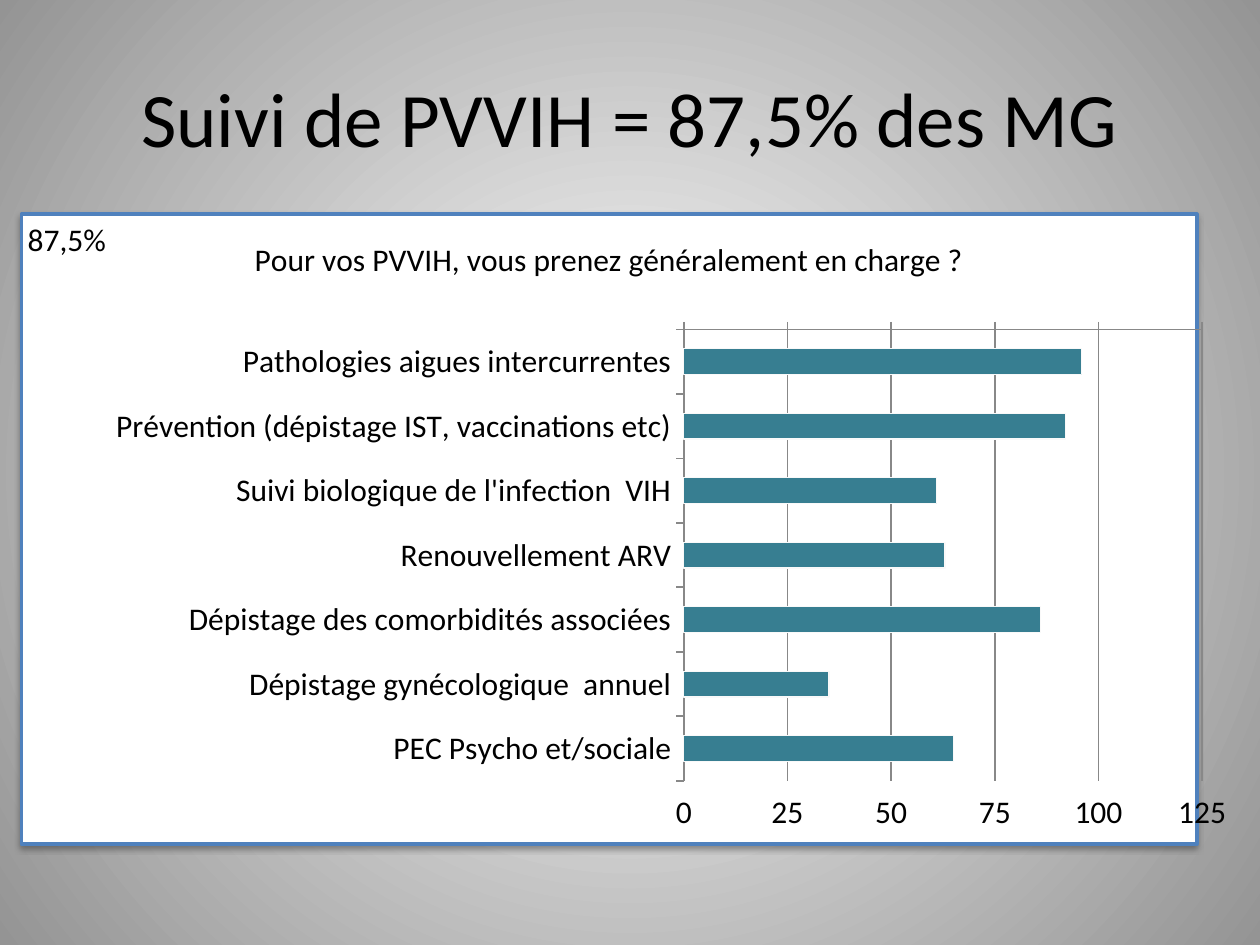
from lxml import etree
from pptx import Presentation
from pptx.chart.data import CategoryChartData
from pptx.dml.color import RGBColor
from pptx.enum.chart import XL_CHART_TYPE, XL_TICK_LABEL_POSITION, XL_TICK_MARK
from pptx.enum.shapes import MSO_SHAPE
from pptx.enum.text import MSO_ANCHOR, PP_ALIGN
from pptx.oxml import parse_xml
from pptx.oxml.ns import nsdecls, qn
from pptx.util import Pt


def color(hex_string):
    return RGBColor.from_string(hex_string)


def set_layout(parent, index, **settings):
    """Give a chart part a manual layout, as fractions of the chart."""
    for old in parent.findall(qn("c:layout")):
        parent.remove(old)
    layout = etree.Element(qn("c:layout"))
    manual = etree.SubElement(layout, qn("c:manualLayout"))
    for tag, value in settings.items():
        etree.SubElement(manual, qn(f"c:{tag}")).set("val", str(value))
    parent.insert(index, layout)


presentation = Presentation()
presentation.slide_width, presentation.slide_height = Pt(720), Pt(540)
slide = presentation.slides.add_slide(presentation.slide_layouts[6])

# Background: radial gradient, white centre to grey corners
background = slide.background.fill
background.gradient()
for stop, shade in zip(background.gradient_stops, ("FFFFFF", "949494")):
    stop.color.rgb = color(shade)
gradient = slide.background._cSld.find(".//" + qn("a:gradFill"))
gradient.replace(gradient.find(qn("a:lin")), parse_xml(
    f'<a:path {nsdecls("a")} path="circle">'
    '<a:fillToRect l="50000" t="50000" r="50000" b="50000"/></a:path>'))

# Heading and white panel
heading = slide.shapes.add_textbox(Pt(36), Pt(21.6), Pt(648), Pt(90))
panel = slide.shapes.add_shape(MSO_SHAPE.RECTANGLE, Pt(12.24), Pt(122.4), Pt(671.76), Pt(360))
panel.fill.solid()
panel.fill.fore_color.rgb = color("FFFFFF")
panel.line.color.rgb = color("4F81BD")
panel.line.width = Pt(2)
panel.shadow.inherit = False
panel._element.spPr.find(qn("a:effectLst")).append(parse_xml(
    f'<a:outerShdw {nsdecls("a")} blurRad="38100" dist="22860" dir="5400000" rotWithShape="0">'
    '<a:srgbClr val="000000"><a:alpha val="35000"/></a:srgbClr></a:outerShdw>'))

for shape, text, size, align, anchor in (
    (heading, "Suivi de PVVIH = 87,5% des MG", 44, PP_ALIGN.CENTER, MSO_ANCHOR.MIDDLE),
    (panel, "87,5%", 18, PP_ALIGN.LEFT, MSO_ANCHOR.TOP),
):
    frame = shape.text_frame
    frame.text = text
    frame.word_wrap = True
    frame.vertical_anchor = anchor
    frame.margin_left = frame.margin_right = frame.margin_top = frame.margin_bottom = Pt(3.6)
    paragraph = frame.paragraphs[0]
    paragraph.alignment = align
    font = paragraph.runs[0].font
    font.name, font.size = "Calibri", Pt(size)
    font.color.rgb = color("000000")

# Bar chart of the care provided
care = {
    "Pathologies aigues intercurrentes": 96,
    "Prévention (dépistage IST, vaccinations etc)": 92,
    "Suivi biologique de l'infection  VIH": 61,
    "Renouvellement ARV": 63,
    "Dépistage des comorbidités associées": 86,
    "Dépistage gynécologique  annuel": 35,
    "PEC Psycho et/sociale": 65,
}
care_data = CategoryChartData()
care_data.categories = list(care)
care_data.add_series("Series 1", list(care.values()))
chart = slide.shapes.add_chart(
    XL_CHART_TYPE.BAR_CLUSTERED, Pt(19.44), Pt(125.28), Pt(682.56), Pt(357.84), care_data).chart
chart.has_legend = False
chart.font.name, chart.font.size = "Calibri", Pt(10)
chart.font.color.rgb = color("000000")

# Bars
plot = chart.plots[0]
plot.gap_width = 150
plot.vary_by_categories = False
bars = plot.series[0].format
bars.fill.solid()
bars.fill.fore_color.rgb = color("377E91")
bars.line.color.rgb = color("F9F9F9")
bars.line.width = Pt(0.75)

# Axes
categories, values = chart.category_axis, chart.value_axis
categories.reverse_order = True
values.minimum_scale, values.maximum_scale, values.major_unit = 0, 125, 25
values.tick_label_position = XL_TICK_LABEL_POSITION.HIGH
values.has_major_gridlines = True
for axis in (categories, values):
    axis.major_tick_mark = XL_TICK_MARK.OUTSIDE
    axis.tick_labels.number_format = "General"
    axis.tick_labels.number_format_is_linked = False
    label_font = axis.tick_labels.font
    label_font.name, label_font.size = "Calibri", Pt(18)
    label_font.color.rgb = color("000000")
for line in (categories.format.line, values.format.line, values.major_gridlines.format.line):
    line.color.rgb = color("888888")
    line.width = Pt(1)

# Question above the bars
question = chart.chart_title.text_frame
question.text = "Pour vos PVVIH, vous prenez généralement en charge ?"
question_font = question.paragraphs[0].runs[0].font
question_font.name, question_font.size, question_font.bold = "Calibri", Pt(18), False
question_font.color.rgb = color("000000")

# Positions inside the chart
title = chart.chart_title._element
set_layout(title, 1, xMode="edge", yMode="edge", x=0.18, y=0.02)
title.find(qn("c:overlay")).set("val", "1")
set_layout(chart._chartSpace.chart.plotArea, 0, layoutTarget="inner", xMode="edge",
           yMode="edge", x=0.544, y=0.176, w=0.434, h=0.721)

presentation.save("out.pptx")
